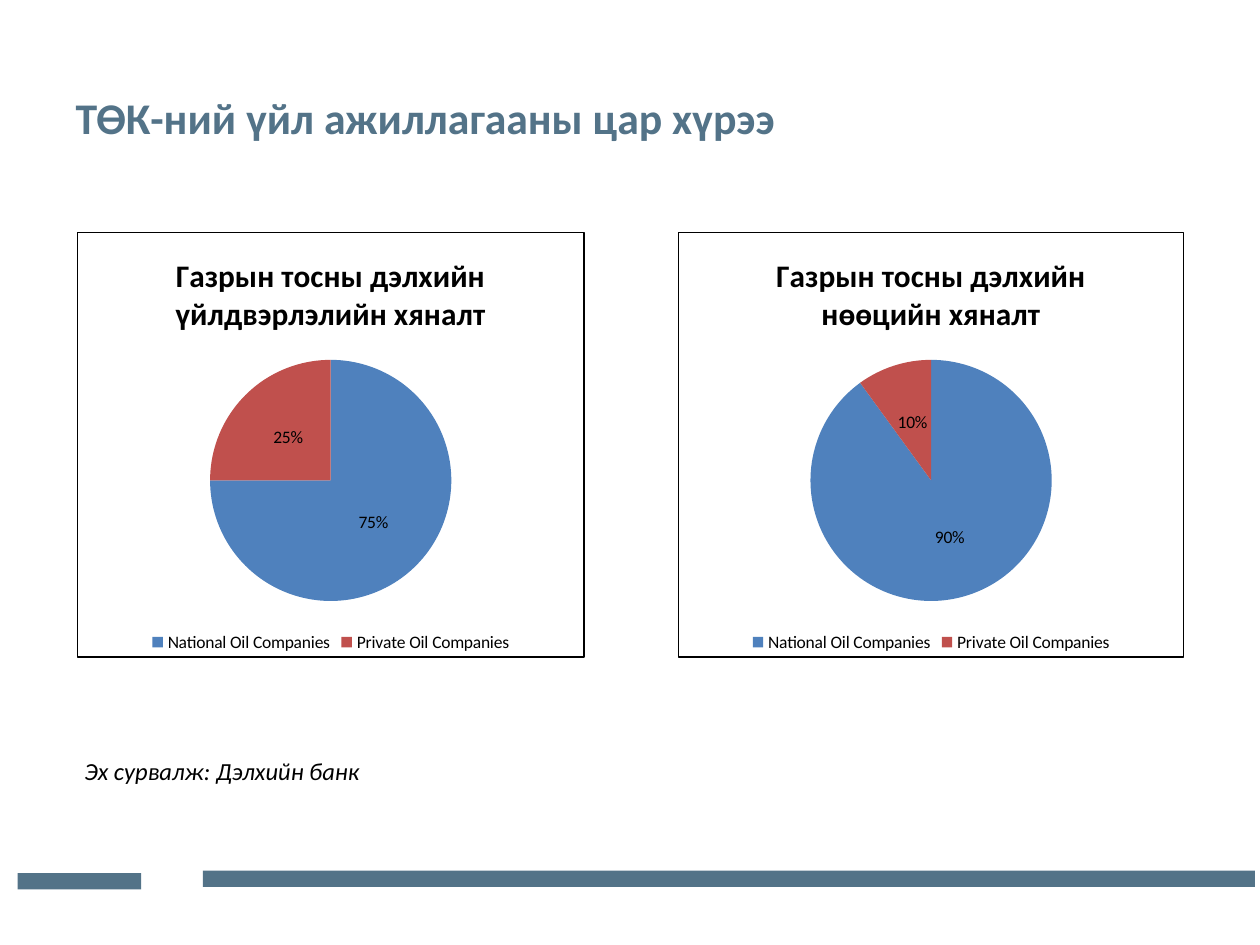
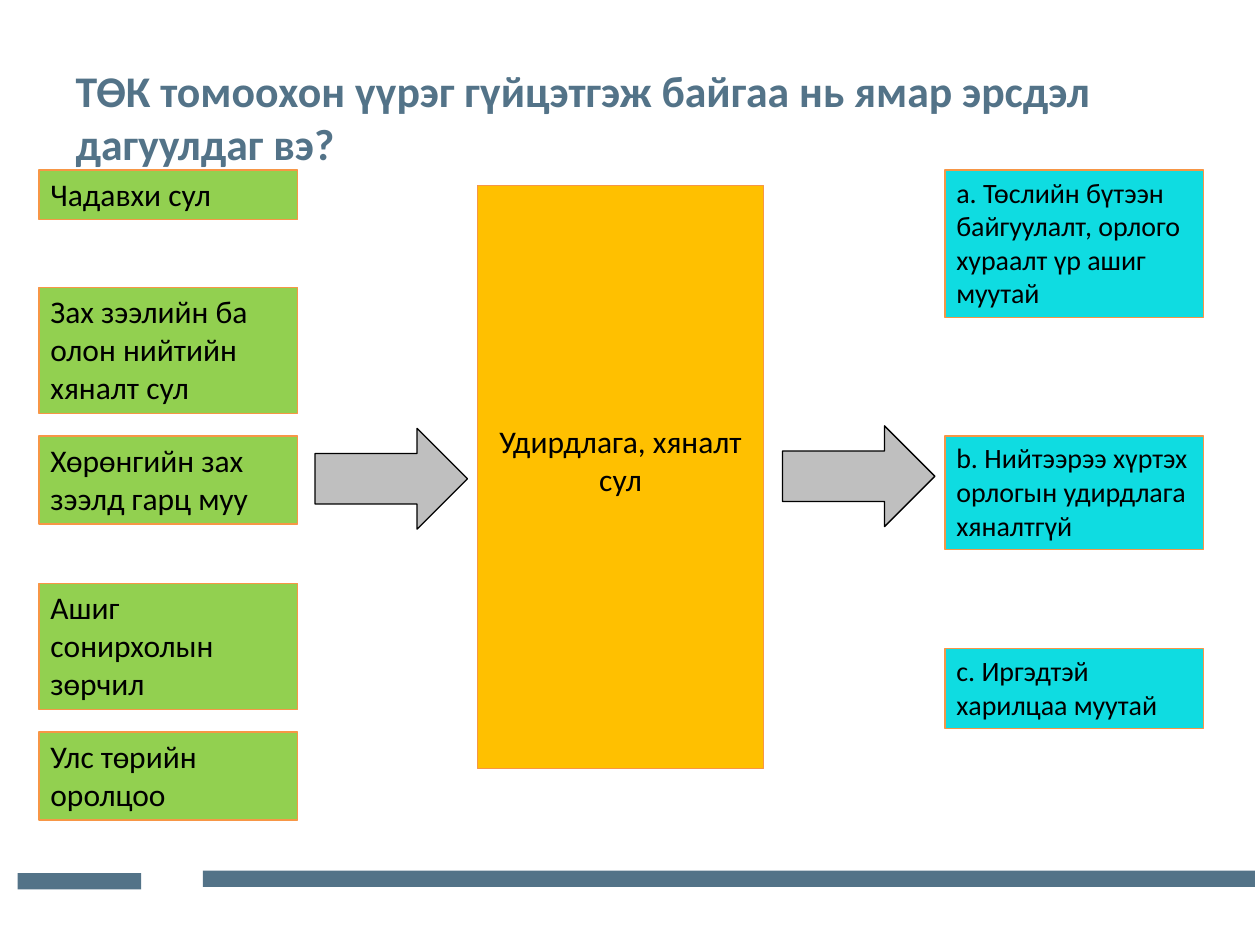
from lxml import etree
from pptx import Presentation
from pptx.chart.data import CategoryChartData
from pptx.dml.color import RGBColor
from pptx.enum.chart import XL_CHART_TYPE as ChartType
from pptx.enum.chart import XL_LABEL_POSITION as LabelPosition
from pptx.enum.chart import XL_LEGEND_POSITION as LegendPosition
from pptx.enum.shapes import MSO_SHAPE as Shape
from pptx.enum.text import MSO_ANCHOR as Anchor
from pptx.enum.text import PP_ALIGN as Align
from pptx.oxml import parse_xml
from pptx.util import Inches, Pt

FONT = "Calibri"
SLATE = RGBColor(0x53, 0x73, 0x88)
BLACK = RGBColor(0, 0, 0)
BLUE = RGBColor(0x4F, 0x81, 0xBD)
RED = RGBColor(0xC0, 0x50, 0x4D)
ORANGE = RGBColor(0xF7, 0x96, 0x46)
GREEN = RGBColor(0x92, 0xD0, 0x50)
AMBER = RGBColor(0xFF, 0xC0, 0x00)
CYAN = RGBColor(0x0F, 0xDC, 0xE1)
GREY = RGBColor(0xBF, 0xBF, 0xBF)

TITLE_BOX = (0.5, 0.3, 9, 1.25)
FOOTER_BARS = [(0.14, 6.93, 0.98, 0.13), (1.61, 6.91, 8.35, 0.13)]
OWNERS = ["National Oil Companies", "Private Oil Companies"]
CHART_BORDER = """<c:spPr
  xmlns:c="http://schemas.openxmlformats.org/drawingml/2006/chart"
  xmlns:a="http://schemas.openxmlformats.org/drawingml/2006/main">
  <a:noFill/><a:ln w="9525"><a:solidFill><a:srgbClr val="000000"/></a:solidFill></a:ln>
</c:spPr>"""

# (top, height, text) of each box in a column
CAUSES = [
    (1.35, 0.39, "Чадавхи сул"),
    (2.28, 1, "Зах зээлийн ба олон нийтийн хяналт сул"),
    (3.46, 0.7, "Хөрөнгийн зах зээлд гарц муу"),
    (4.63, 1, "Ашиг сонирхолын зөрчил"),
    (5.81, 0.7, "Улс төрийн оролцоо"),
]
EFFECTS = [
    (1.35, 1.17, "a. Төслийн бүтээн байгуулалт, орлого хураалт үр ашиг муутай"),
    (3.46, 0.9, "b. Нийтээрээ хүртэх орлогын удирдлага хяналтгүй"),
    (5.15, 0.63, "c. Иргэдтэй харилцаа муутай"),
]


def inches(box):
    return [Inches(length) for length in box]


def style_font(font, size, color=BLACK, bold=False, italic=False):
    font.name, font.size = FONT, Pt(size)
    font.bold, font.italic = bold, italic
    font.color.rgb = color


def write(shape, text, size, align=Align.LEFT, anchor=Anchor.TOP, insets=(0.09, 0.04), **style):
    frame = shape.text_frame
    frame.word_wrap = True
    frame.vertical_anchor = anchor
    frame.margin_left = frame.margin_right = Inches(insets[0])
    frame.margin_top = frame.margin_bottom = Inches(insets[1])
    frame.text = text
    para = frame.paragraphs[0]
    para.alignment = align
    style_font(para.runs[0].font, size, **style)


def add_block(page, box, fill, line=None, preset=Shape.RECTANGLE):
    block = page.shapes.add_shape(preset, *inches(box))
    block.shadow.inherit = False
    block.fill.solid()
    block.fill.fore_color.rgb = fill
    if line is None:
        block.line.fill.background()
    else:
        block.line.color.rgb = line
        block.line.width = Pt(0.75)
    return block


def add_page(deck, title):
    """Add a slide with the shared footer bars and title style."""
    page = deck.slides.add_slide(deck.slide_layouts[5])
    for bar in FOOTER_BARS:
        add_block(page, bar, SLATE)
    heading = page.shapes.title
    heading.left, heading.top, heading.width, heading.height = inches(TITLE_BOX)
    write(heading, title, 25, anchor=Anchor.MIDDLE, insets=(0.1, 0.05), color=SLATE, bold=True)
    return page


def add_control_pie(page, box, title, shares):
    data = CategoryChartData(number_format="0%")
    data.categories = OWNERS
    data.add_series("Series 1", shares)
    chart = page.shapes.add_chart(ChartType.PIE, *inches(box), data).chart
    style_font(chart.font, 10)

    chart.has_title = True
    chart.chart_title.include_in_layout = False
    heading = chart.chart_title.text_frame
    heading.text = title
    style_font(heading.paragraphs[0].runs[0].font, 18, bold=True)

    chart.has_legend = True
    chart.legend.position = LegendPosition.BOTTOM
    chart.legend.include_in_layout = False

    plot = chart.plots[0]
    plot.vary_by_categories = True
    for index, color in enumerate((BLUE, RED)):
        slice_format = plot.series[0].points[index].format
        slice_format.fill.solid()
        slice_format.fill.fore_color.rgb = color
    plot.has_data_labels = True
    labels = plot.data_labels
    labels.show_value = True
    labels.number_format, labels.number_format_is_linked = "0%", False
    labels.position = LabelPosition.CENTER

    chart_part = next(el for el in chart.element if etree.QName(el).localname == "chart")
    chart_part.addnext(parse_xml(CHART_BORDER))


def add_column(page, left, items, fill, size):
    """Stack text boxes of equal width at their given tops."""
    for top, height, text in items:
        write(add_block(page, (left, top, 2.05, height), fill, ORANGE), text, size)


def build_scope_page(deck):
    page = add_page(deck, "ТӨК-ний үйл ажиллагааны цар хүрээ")
    add_control_pie(page, (0.61, 1.84, 4.03, 3.38),
                    "Газрын тосны дэлхийн үйлдвэрлэлийн хяналт", (0.75, 0.25))
    add_control_pie(page, (5.38, 1.84, 4.02, 3.38),
                    "Газрын тосны дэлхийн нөөцийн хяналт", (0.9, 0.1))
    source = page.shapes.add_textbox(*inches((0.58, 5.96, 4.24, 0.33)))
    write(source, "Эх сурвалж: Дэлхийн банк", 14, italic=True)


def build_risk_page(deck):
    page = add_page(deck, "ТӨК томоохон үүрэг гүйцэтгэж байгаа нь ямар эрсдэл дагуулдаг вэ?")
    add_column(page, 0.31, CAUSES, GREEN, 18)
    core = add_block(page, (3.79, 1.47, 2.27, 4.63), AMBER, ORANGE)
    write(core, "Удирдлага, хяналт сул", 18, align=Align.CENTER, anchor=Anchor.MIDDLE)
    core.text_frame.margin_bottom = Inches(0.31)
    add_column(page, 7.5, EFFECTS, CYAN, 16)
    for left, top in ((2.5, 3.4), (6.21, 3.38)):
        add_block(page, (left, top, 1.21, 0.8), GREY, BLACK, Shape.RIGHT_ARROW)


def main():
    deck = Presentation()
    deck.slide_width, deck.slide_height = Inches(10), Inches(7.5)
    build_scope_page(deck)
    build_risk_page(deck)
    deck.save("out.pptx")


if __name__ == "__main__":
    main()
